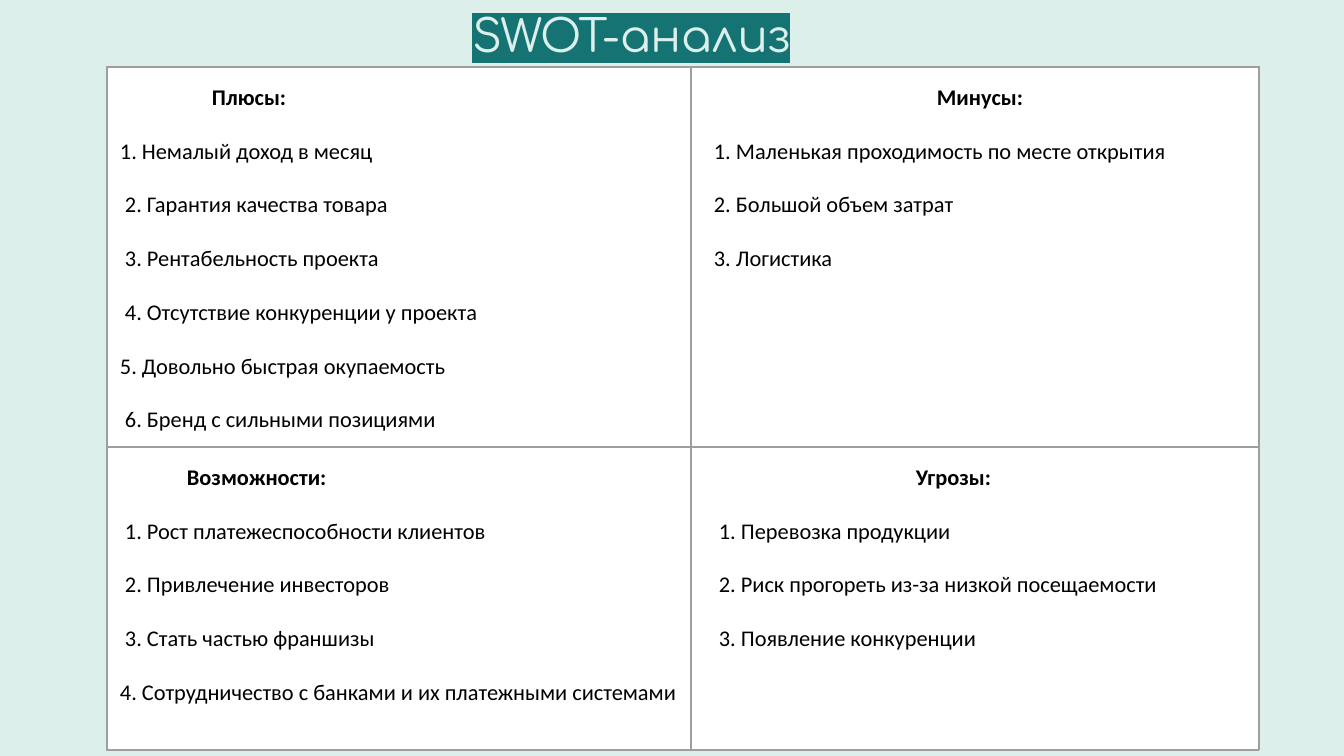
import pptx
import pptx.dml.color
import pptx.enum.text
import pptx.oxml
import pptx.oxml.ns
import pptx.util

EMU_PER_PX = 914400 / 134.4
NS = pptx.oxml.ns.nsdecls("a")

# Each quadrant: heading, heading indent, then (text, indent) items; indents in px.
STRENGTHS = ("Плюсы:", 92, [
    ("Немалый доход в месяц", 0),
    ("Гарантия качества товара", 5),
    ("Рентабельность проекта", 5),
    ("Отсутствие конкуренции у проекта", 5),
    ("Довольно быстрая окупаемость", 0),
    ("Бренд с сильными позициями", 5),
])
WEAKNESSES = ("Минусы:", 233, [
    ("Маленькая проходимость по месте открытия", 10),
    ("Большой объем затрат", 10),
    ("Логистика", 10),
])
OPPORTUNITIES = ("Возможности:", 67, [
    ("Рост платежеспособности клиентов", 5),
    ("Привлечение инвесторов", 5),
    ("Стать частью франшизы", 5),
    ("Сотрудничество с банками и их платежными системами", 0),
])
THREATS = ("Угрозы:", 212, [
    ("Перевозка продукции", 15),
    ("Риск прогореть из-за низкой посещаемости", 15),
    ("Появление конкуренции", 15),
])


def px(length):
    return pptx.util.Emu(round(length * EMU_PER_PX))


def color(value):
    return pptx.dml.color.RGBColor.from_string(value)


class SwotSlide:
    BACKGROUND = "DCEFEB"
    TEAL = "167373"
    BORDER = "9E9E9E"

    def __init__(self, presentation):
        self.slide = presentation.slides.add_slide(presentation.slide_layouts[6])
        fill = self.slide.background.fill
        fill.solid()
        fill.fore_color.rgb = color(self.BACKGROUND)

    def run(self, paragraph, text, font, size, ink, bold=False):
        run = paragraph.add_run()
        run.text = text
        run.font.name = font
        run.font.size = pptx.util.Pt(size)
        run.font.bold = bold
        run.font.color.rgb = color(ink)
        return run

    def title(self, text, left, top, width, height):
        frame = self.slide.shapes.add_textbox(
            px(left), px(top), px(width), px(height)).text_frame
        frame.word_wrap = True
        frame.vertical_anchor = pptx.enum.text.MSO_ANCHOR.MIDDLE
        frame.margin_left = frame.margin_right = px(10)
        frame.margin_top = frame.margin_bottom = px(5)
        paragraph = frame.paragraphs[0]
        paragraph.alignment = pptx.enum.text.PP_ALIGN.CENTER
        paragraph.line_spacing = 0.9
        run = self.run(paragraph, text, "Comfortaa", 24, self.BACKGROUND)
        highlight = pptx.oxml.parse_xml(
            f'<a:highlight {NS}><a:srgbClr val="{self.TEAL}"/></a:highlight>')
        run.font._element.find(pptx.oxml.ns.qn("a:solidFill")).addnext(highlight)

    def table(self, quadrants, left, top, widths, heights):
        table = self.slide.shapes.add_table(
            len(heights), len(widths), px(left), px(top),
            px(sum(widths)), px(sum(heights))).table
        table.first_row = table.horz_banding = False
        for column, width in zip(table.columns, widths):
            column.width = px(width)
        for row, height in zip(table.rows, heights):
            row.height = px(height)
        for cell, quadrant in zip(table.iter_cells(), quadrants):
            self.cell(cell, *quadrant)

    def cell(self, cell, heading, heading_indent, items):
        cell.margin_left = cell.margin_right = px(13)
        cell.margin_top = cell.margin_bottom = px(13)
        self.borders(cell)
        cell.fill.solid()
        cell.fill.fore_color.rgb = color("FFFFFF")
        self.line(cell.text_frame.paragraphs[0], heading, heading_indent, bold=True)
        for number, (text, indent) in enumerate(items, 1):
            paragraph = cell.text_frame.add_paragraph()
            paragraph.space_before = pptx.util.Pt(12)
            self.line(paragraph, f"{number}. {text}", indent)

    def line(self, paragraph, text, indent, bold=False):
        paragraph.line_spacing = 1.15
        paragraph._p.get_or_add_pPr().set("marL", str(px(indent)))
        self.run(paragraph, text, "Calibri", 12, "000000", bold)

    def borders(self, cell):
        properties = cell._tc.get_or_add_tcPr()
        for side in "LRTB":
            properties.append(pptx.oxml.parse_xml(
                f'<a:ln{side} {NS} w="{pptx.util.Pt(0.75)}"><a:solidFill>'
                f'<a:srgbClr val="{self.BORDER}"/></a:solidFill></a:ln{side}>'))


def main():
    presentation = pptx.Presentation()
    presentation.slide_width = px(1344)
    presentation.slide_height = px(756)
    swot = SwotSlide(presentation)
    swot.title("SWOT-анализ", 75, 8, 1113, 59)
    swot.table([STRENGTHS, WEAKNESSES, OPPORTUNITIES, THREATS],
               107, 67, widths=[584, 568], heights=[380, 303])
    presentation.save("out.pptx")


if __name__ == "__main__":
    main()
